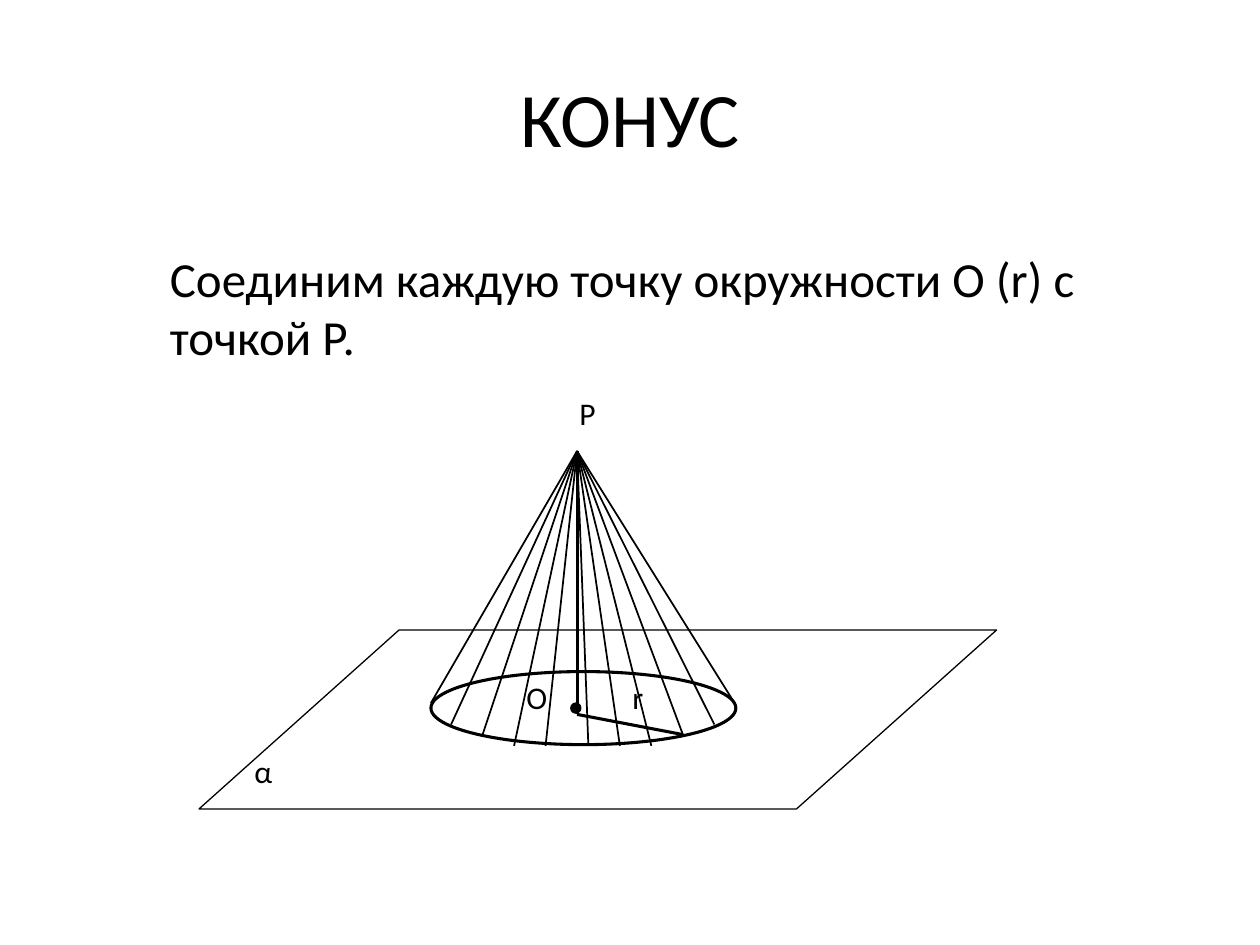
from pptx import Presentation
from pptx.dml.color import RGBColor
from pptx.enum.shapes import MSO_CONNECTOR, MSO_SHAPE
from pptx.enum.text import MSO_ANCHOR, PP_ALIGN
from pptx.oxml.ns import qn
from pptx.util import Inches, Pt
from lxml.etree import SubElement

BLACK = RGBColor(0, 0, 0)
WHITE = RGBColor(255, 255, 255)


class Drawing:
    """Draws styled elements on the current slide."""

    def __init__(self, slide, font="Calibri", color=BLACK):
        self.slide = slide
        self.font = font
        self.color = color

    def style(self, p, size):
        p.font.name = self.font
        p.font.size = Pt(size)
        p.font.color.rgb = self.color

    def title(self, text, left, top, width, height):
        sp = self.slide.shapes.title
        sp.left, sp.top = Inches(left), Inches(top)
        sp.width, sp.height = Inches(width), Inches(height)
        tf = sp.text_frame
        tf.text = text
        tf.vertical_anchor = MSO_ANCHOR.MIDDLE
        tf.paragraphs[0].alignment = PP_ALIGN.CENTER
        self.style(tf.paragraphs[0], 44)

    def text(self, text, left, top, width, height=0.5, size=18, wrap=True):
        sp = self.slide.shapes.add_textbox(
            Inches(left), Inches(top), Inches(width), Inches(height))
        tf = sp.text_frame
        tf.word_wrap = wrap
        tf.text = text
        self.style(tf.paragraphs[0], size)

    def shape(self, kind, left, top, width, height, fill=None, weight=0.75):
        sp = self.slide.shapes.add_shape(
            kind, Inches(left), Inches(top), Inches(width), Inches(height))
        sp.shadow.inherit = False
        if fill is None:
            sp.fill.background()
        else:
            sp.fill.solid()
            sp.fill.fore_color.rgb = fill
        sp.line.color.rgb = self.color
        sp.line.width = Pt(weight)
        return sp

    def line(self, start, end, weight=1):
        cx = self.slide.shapes.add_connector(
            MSO_CONNECTOR.STRAIGHT, *map(Inches, start + end))
        cx.line.color.rgb = self.color
        cx.line.width = Pt(weight)
        SubElement(cx._element.spPr, qn("a:effectLst"))


def main():
    prs = Presentation()
    prs.slide_width, prs.slide_height = Inches(10), Inches(7.5)
    s = Drawing(prs.slides.add_slide(prs.slide_layouts[5]))

    apex, center, rim_point = (4.58, 3.58), (4.58, 5.67), (5.42, 5.83)
    rim = [(5.83, 5.58), (5.67, 5.75), rim_point, (5.17, 5.92),
           (4.92, 5.92), (4.67, 5.92), (4.33, 5.92), (4.08, 5.92),
           (3.83, 5.83), (3.58, 5.75), (3.42, 5.58)]

    s.title("КОНУС", 0.5, 0.3, 9, 1.25)
    plane = s.shape(MSO_SHAPE.PARALLELOGRAM, 1.58, 5, 6.33, 1.42, WHITE)
    plane.adjustments[0] = 1.118
    s.text("α", 1.92, 5.92, 0.5)
    s.text("Соединим каждую точку окружности О (r) с точкой Р.",
           1.25, 1.92, 8.08, 1.03, size=28)
    s.shape(MSO_SHAPE.OVAL, 3.42, 5.33, 2.42, 0.58, weight=1.75)
    s.line(center, rim_point, 1.75)
    s.shape(MSO_SHAPE.OVAL, 4.53, 5.58, 0.08, 0.08, BLACK)
    s.text("О", 4.08, 5.33, 0.5)
    s.text("r", 4.92, 5.33, 0.31, wrap=False)
    s.line(center, apex, 1.75)
    s.text("Р", 4.5, 3.08, 0.58)
    for point in rim:
        s.line(apex, point)

    prs.save("out.pptx")


if __name__ == "__main__":
    main()
